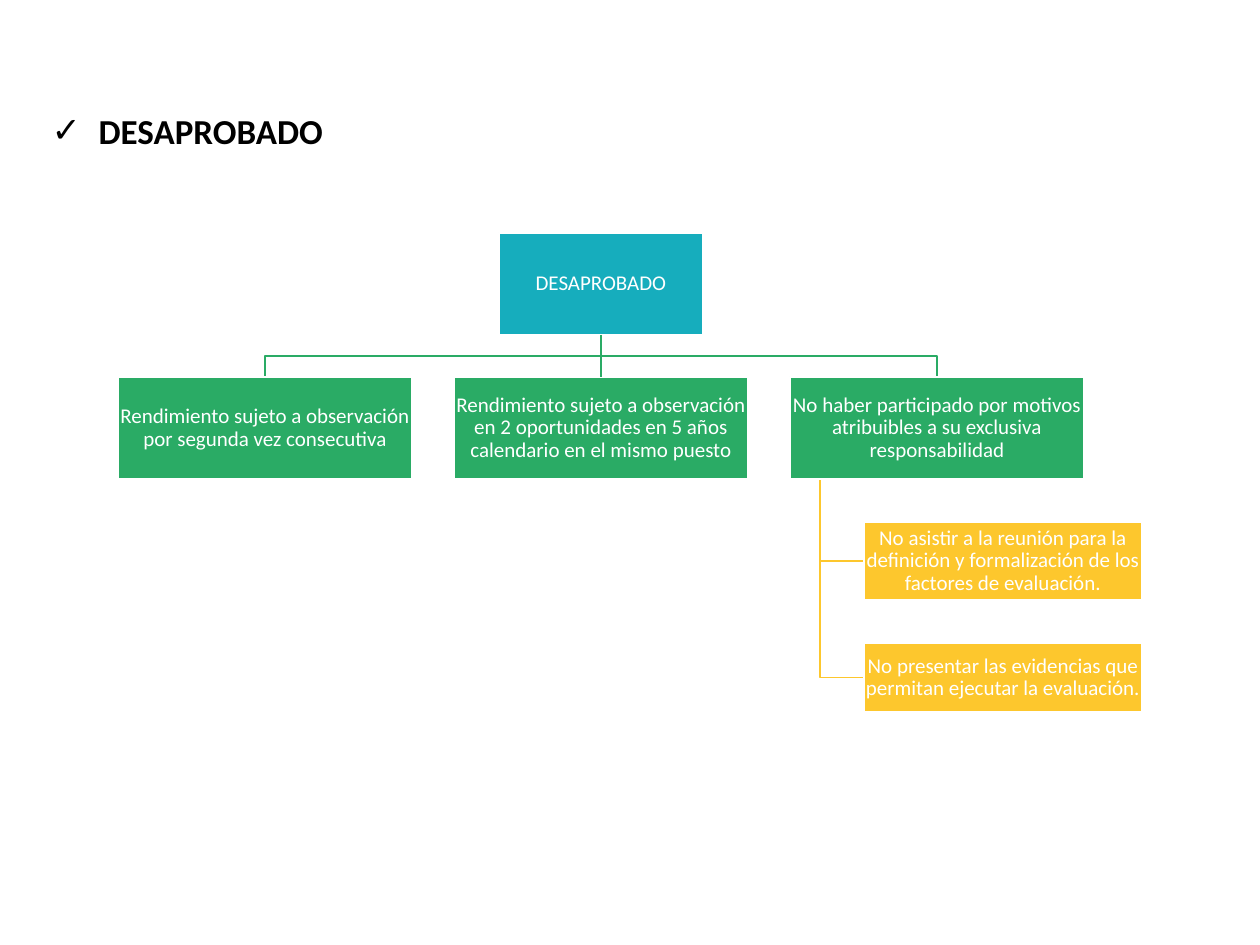
from lxml import etree
from pptx import Presentation
from pptx.dml.color import RGBColor
from pptx.enum.shapes import MSO_CONNECTOR, MSO_SHAPE
from pptx.enum.text import MSO_ANCHOR, MSO_AUTO_SIZE, PP_ALIGN
from pptx.oxml.ns import qn
from pptx.util import Emu, Pt

FONT = "Calibri"
COLORS = {"root": "16ADBD", "cause": "2AAB65", "detail": "FDC72D",
          "white": "FFFFFF", "black": "000000"}
CAUSES = [
    "Rendimiento sujeto a observación por segunda vez consecutiva",
    "Rendimiento sujeto a observación en 2 oportunidades en 5 años "
    "calendario en el mismo puesto",
    "No haber participado por motivos atribuibles a su exclusiva responsabilidad",
]
DETAILS = [
    ("No asistir a la reunión para la definición y formalización de los "
     "factores de evaluación.", 522, 78),
    ("No presentar las evidencias que permitan ejecutar la evaluación.", 643, 69),
]
CENTER_X, BOX_H = 601, 102
ROOT_Y, ROOT_W = 233, 204
CAUSE_Y, CAUSE_W, CAUSE_STEP = 377, 294, 336
DETAIL_X, DETAIL_W, SPINE_X = 864, 278, 820


def px(n):
    return Emu(round(n * 914400 / 126))


def color(name):
    return RGBColor.from_string(COLORS[name])


def set_text(tf, text, size=12, fill="white", bold=False,
             align=PP_ALIGN.CENTER, spacing=0.9):
    tf.word_wrap = True
    p = tf.paragraphs[0]
    p.alignment = align
    p.line_spacing = spacing
    r = p.add_run()
    r.text = text
    r.font.name = FONT
    r.font.size = Pt(size)
    r.font.bold = bold
    r.font.color.rgb = color(fill)
    return p


def set_line(sp, name):
    sp.line.color.rgb = color(name)
    sp.line.width = Pt(1)


def add_heading(slide, text):
    sp = slide.shapes.title
    sp.left, sp.top, sp.width, sp.height = px(39), px(103), px(1053), px(55)
    tf = sp.text_frame
    tf.auto_size = MSO_AUTO_SIZE.NONE
    tf.vertical_anchor = MSO_ANCHOR.TOP
    p = set_text(tf, text, size=20, fill="black", bold=True,
                 align=PP_ALIGN.JUSTIFY, spacing=1.0)
    pPr = p._p.get_or_add_pPr()
    pPr.set("marL", str(px(47)))
    pPr.set("indent", str(-px(47)))
    etree.SubElement(pPr, qn("a:buFont"), typeface=FONT)
    etree.SubElement(pPr, qn("a:buChar"), char="✓")


def add_box(slide, text, x, y, w, h, fill):
    sp = slide.shapes.add_shape(MSO_SHAPE.RECTANGLE, px(x), px(y), px(w), px(h))
    sp.shadow.inherit = False
    sp.fill.solid()
    sp.fill.fore_color.rgb = color(fill)
    set_line(sp, "white")
    tf = sp.text_frame
    tf.margin_left = tf.margin_right = tf.margin_top = tf.margin_bottom = px(1)
    tf.vertical_anchor = MSO_ANCHOR.MIDDLE
    set_text(tf, text)
    return sp


def add_branch(slide, points, fill):
    """Draw an open bent line through the given px points."""
    start, *rest = [(px(x), px(y)) for x, y in points]
    builder = slide.shapes.build_freeform(*start)
    builder.add_line_segments(rest, close=False)
    sp = builder.convert_to_shape()
    sp.shadow.inherit = False
    sp.fill.background()
    set_line(sp, fill)


def add_stem(slide, top_box, bottom_box, fill):
    """Join the bottom of one box to the top of the box below it."""
    line = slide.shapes.add_connector(MSO_CONNECTOR.STRAIGHT, 0, 0, 0, 0)
    line.begin_connect(top_box, 2)
    line.end_connect(bottom_box, 0)
    etree.SubElement(line._element.spPr, qn("a:effectLst"))
    set_line(line, fill)


def main():
    prs = Presentation()
    prs.slide_width, prs.slide_height = px(1260), px(945)
    slide = prs.slides.add_slide(prs.slide_layouts[5])
    add_heading(slide, "DESAPROBADO")

    for _, y, h in reversed(DETAILS):
        mid = y + h / 2
        add_branch(slide, [(SPINE_X, CAUSE_Y + BOX_H), (SPINE_X, mid),
                           (DETAIL_X, mid)], "detail")
    root_bottom = ROOT_Y + BOX_H
    bus_y = (root_bottom + CAUSE_Y) / 2
    for x in (CENTER_X + CAUSE_STEP, CENTER_X - CAUSE_STEP):
        add_branch(slide, [(CENTER_X, root_bottom), (CENTER_X, bus_y),
                           (x, bus_y), (x, CAUSE_Y)], "cause")

    root = add_box(slide, "DESAPROBADO", CENTER_X - ROOT_W / 2, ROOT_Y,
                   ROOT_W, BOX_H, "root")
    causes = [add_box(slide, text,
                      CENTER_X - CAUSE_W / 2 + (i - 1) * CAUSE_STEP,
                      CAUSE_Y, CAUSE_W, BOX_H, "cause")
              for i, text in enumerate(CAUSES)]
    add_stem(slide, root, causes[1], "cause")
    for text, y, h in DETAILS:
        add_box(slide, text, DETAIL_X, y, DETAIL_W, h, "detail")

    prs.save("out.pptx")


if __name__ == "__main__":
    main()
